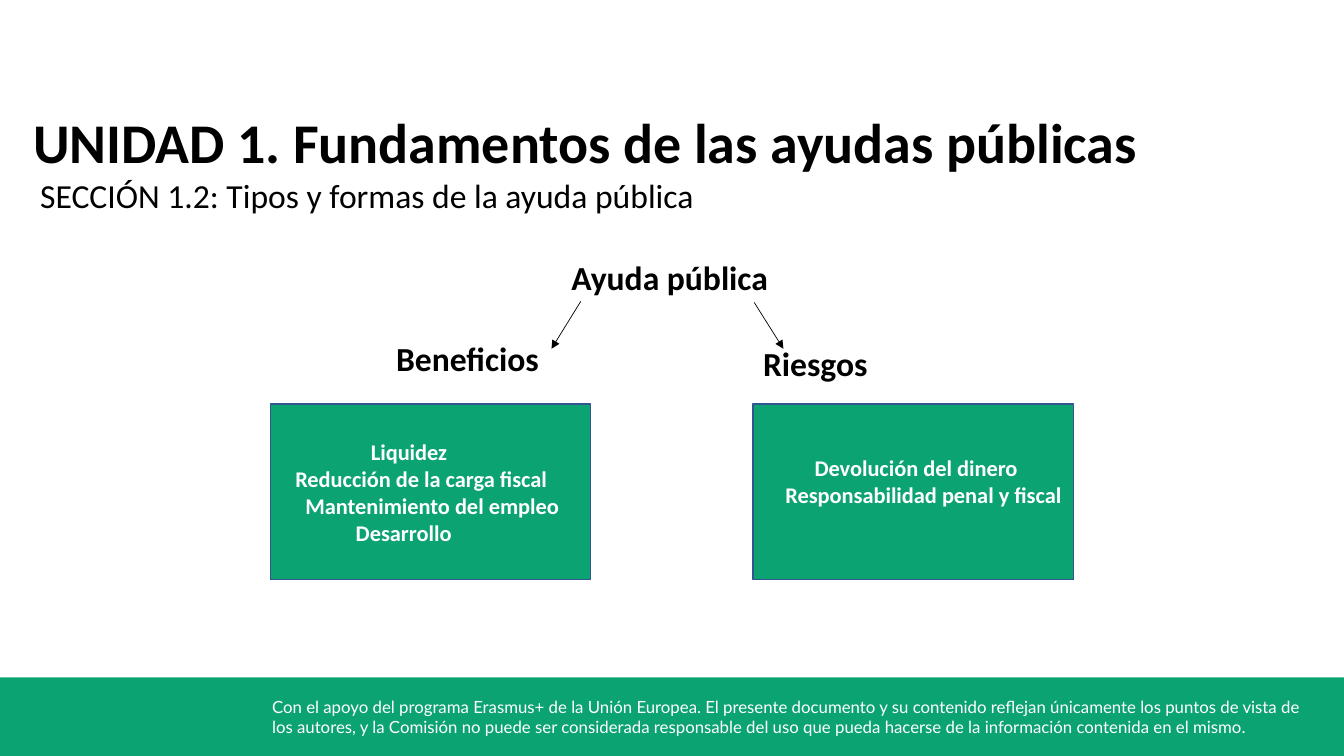
from lxml import etree
from pptx import Presentation
from pptx.dml.color import RGBColor as Rgb
from pptx.enum.shapes import MSO_CONNECTOR as Conn, MSO_SHAPE as Kind
from pptx.enum.text import MSO_ANCHOR as Anchor
from pptx.oxml.ns import qn
from pptx.util import Inches, Pt

HUES = {"green": "0CA373", "edge": "325491", "white": "FFFFFF", "black": "000000"}


class Deck:
    def __init__(self):
        self.show = Presentation()
        self.show.slide_width = Inches(13.33)
        self.show.slide_height = Inches(7.5)
        self.slide = self.show.slides.add_slide(self.show.slide_layouts[6])
        self.shapes = self.slide.shapes

    def hue(self, name):
        return Rgb.from_string(HUES[name])

    def fill(self, frame, lines, hue="black", font="Calibri"):
        frame.word_wrap = True
        for i, (text, size, bold, dent) in enumerate(lines):
            para = frame.paragraphs[0] if i == 0 else frame.add_paragraph()
            para.text = text
            props = para._p.get_or_add_pPr()
            props.set("marL", str(Inches(dent)))
            props.set("algn", "l")
            for run in para.runs:
                run.font.name = font
                run.font.size = Pt(size)
                run.font.bold = bold
                run.font.color.rgb = self.hue(hue)

    def text(self, x, y, w, h, lines, **style):
        box = self.shapes.add_textbox(Inches(x), Inches(y), Inches(w), Inches(h))
        self.fill(box.text_frame, lines, **style)

    def block(self, x, y, w, h, edge=None):
        box = self.shapes.add_shape(Kind.RECTANGLE, Inches(x), Inches(y), Inches(w), Inches(h))
        box.shadow.inherit = False
        box.fill.solid()
        box.fill.fore_color.rgb = self.hue("green")
        if edge:
            box.line.color.rgb = self.hue(edge)
            box.line.width = Pt(1)
        else:
            box.line.fill.background()
        return box

    def card(self, x, lines, foot=0.05):
        frame = self.block(x, 4.01, 3.18, 1.74, "edge").text_frame
        frame.vertical_anchor = Anchor.MIDDLE
        frame.margin_right = 0
        frame.margin_bottom = Inches(foot)
        self.fill(frame, [(text, 16, True, dent) for text, dent in lines], "white")

    def arrow(self, x1, y1, x2, y2):
        line = self.shapes.add_connector(
            Conn.STRAIGHT, Inches(x1), Inches(y1), Inches(x2), Inches(y2))
        line.line.color.rgb = self.hue("black")
        line.line.width = Pt(0.5)
        etree.SubElement(line.line._get_or_add_ln(), qn("a:tailEnd"), type="triangle")
        etree.SubElement(line._element.spPr, qn("a:effectLst"))


def main():
    deck = Deck()
    deck.block(0, 6.72, 13.33, 0.78)
    deck.text(2.6, 6.86, 10.42, 0.5, [(
        "Con el apoyo del programa Erasmus+ de la Unión Europea. El presente documento "
        "y su contenido reflejan únicamente los puntos de vista de los autores, y la "
        "Comisión no puede ser considerada responsable del uso que pueda hacerse de la "
        "información contenida en el mismo.", 12, False, 0)], hue="white", font="Lato")
    deck.text(0.23, 1.02, 12.93, 1.2, [
        ("UNIDAD 1. Fundamentos de las ayudas públicas", 40, True, 0),
        ("SECCIÓN 1.2: Tipos y formas de la ayuda pública", 24, False, 0.07)])
    for head, x, y, w in [("Ayuda pública", 5.57, 2.5, 2.3),
                          ("Beneficios", 3.83, 3.3, 1.7),
                          ("Riesgos", 7.47, 3.35, 1.37)]:
        deck.text(x, y, w, 0.5, [(head, 24, True, 0)])
    deck.card(2.68, [("Liquidez", 0.9), ("Reducción de la carga fiscal", 0.15),
                     ("Mantenimiento del empleo", 0.25), ("Desarrollo", 0.75)])
    deck.card(7.47, [("Devolución del dinero", 0.51),
                     ("Responsabilidad penal y fiscal", 0.22)], foot=0.27)
    deck.arrow(5.76, 2.99, 5.47, 3.46)
    deck.arrow(7.48, 3, 7.77, 3.46)
    deck.show.save("out.pptx")


if __name__ == "__main__":
    main()
